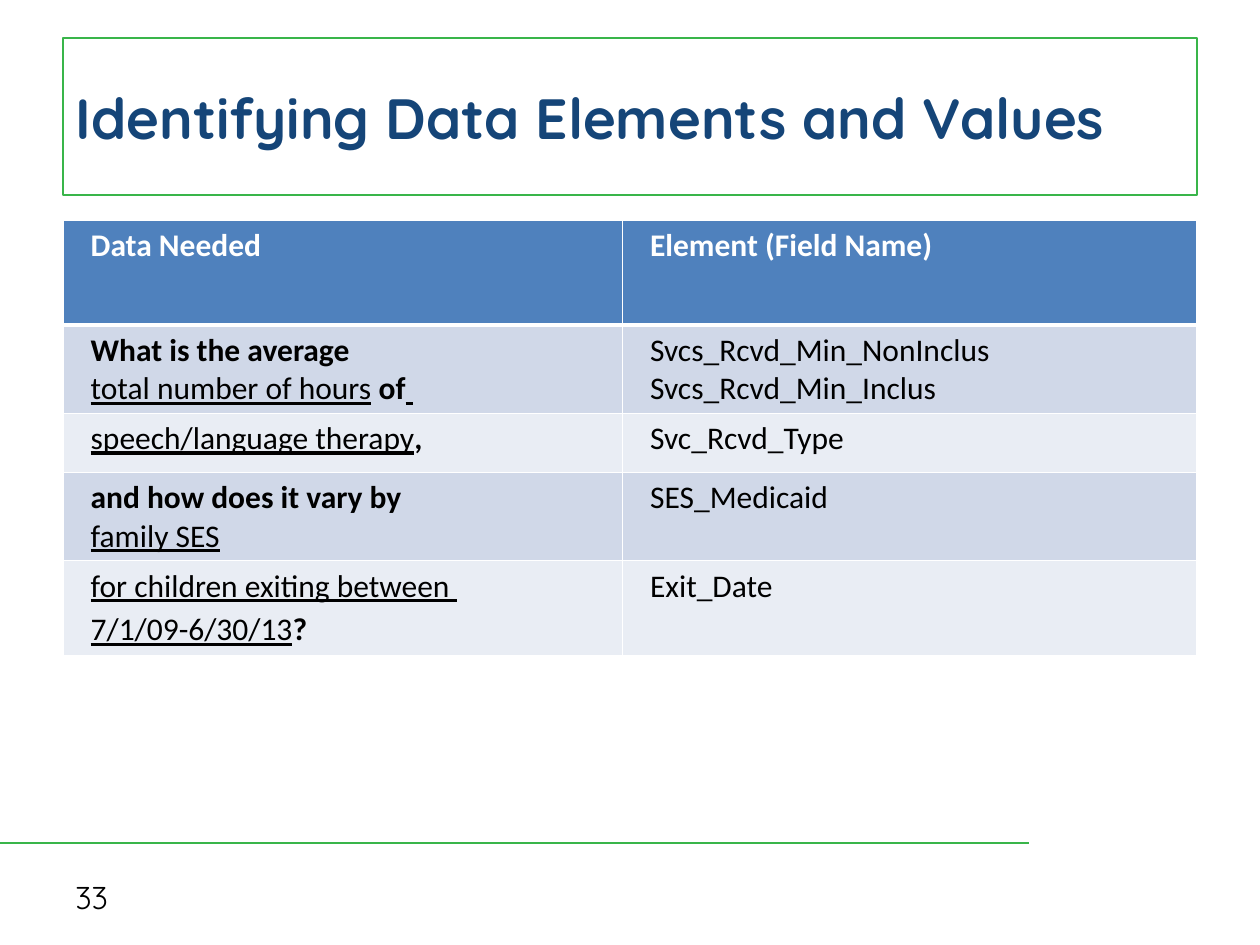
from dataclasses import dataclass
from typing import NamedTuple

from lxml.etree import SubElement
from pptx import Presentation
from pptx.dml.color import RGBColor
from pptx.enum.shapes import MSO_CONNECTOR
from pptx.enum.text import MSO_ANCHOR, MSO_AUTO_SIZE, PP_ALIGN
from pptx.oxml.ns import qn
from pptx.util import Inches, Pt

WIDTH, HEIGHT = Inches(10), Inches(7.5)
MARGIN = 0.05  # share of the slide width
GREEN, NAVY, BLACK, WHITE = "39B54A", "154578", "000000", "FFFFFF"
HEADER_FILL, BAND_FILLS = "4F81BD", ("D0D8E8", "E9EDF4")
COLUMN_WIDTHS = (4.44, 4.56)


class Part(NamedTuple):
    text: str
    bold: bool = False
    underline: bool = False


@dataclass
class Row:
    height: float
    needed: list[list[Part]]
    fields: list[str]
    line_gap: float = 0


ROWS = [
    Row(0.58,
        [[Part("What is the average", bold=True)],
         [Part("total number of hours", underline=True), Part(" "),
          Part("of", bold=True), Part(" ", underline=True)]],
        ["Svcs_Rcvd_Min_NonInclus", "Svcs_Rcvd_Min_Inclus"]),
    Row(0.47,
        [[Part("speech/language therapy", underline=True), Part(",", bold=True)]],
        ["Svc_Rcvd_Type"]),
    Row(0.67,
        [[Part("and how does it vary by", bold=True)],
         [Part("family SES", underline=True)]],
        ["SES_Medicaid"]),
    Row(0.75,
        [[Part("for children exiting between ", underline=True)],
         [Part("7/1/09-6/30/13", underline=True), Part("?", bold=True)]],
        ["Exit_Date"], line_gap=3),
]
HEADER = Row(0.83, [[Part("Data Needed", bold=True)]], ["Element (Field Name)"])


def color(value: str) -> RGBColor:
    return RGBColor.from_string(value)


def format_font(font, name: str, size: float, value: str, bold: bool = False) -> None:
    font.name, font.size, font.bold = name, Pt(size), bold
    font.color.rgb = color(value)


def add_border(cell, side: str, points: float) -> None:
    line = SubElement(cell._tc.get_or_add_tcPr(), qn(f"a:ln{side}"), w=str(Pt(points)))
    fill = SubElement(line, qn("a:solidFill"))
    SubElement(fill, qn("a:srgbClr"), val=WHITE)


def fill_cell(cell, lines: list[list[Part]], fill: str, text_color: str,
              top: float, bottom: float, line_gap: float) -> None:
    for side, points in (("L", 1), ("R", 1), ("T", top), ("B", bottom)):
        add_border(cell, side, points)
    cell.fill.solid()
    cell.fill.fore_color.rgb = color(fill)
    cell.margin_left = cell.margin_right = Inches(0.22)
    cell.margin_top = cell.margin_bottom = Inches(0.05)
    frame = cell.text_frame
    for index, parts in enumerate(lines):
        paragraph = frame.add_paragraph() if index else frame.paragraphs[0]
        if index:
            paragraph.space_before = Pt(line_gap)
        for part in parts:
            run = paragraph.add_run()
            run.text = part.text
            format_font(run.font, "Calibri", 18, text_color, part.bold)
            run.font.underline = part.underline


def add_data_table(slide) -> None:
    rows = [HEADER, *ROWS]
    table = slide.shapes.add_table(
        len(rows), len(COLUMN_WIDTHS), int(WIDTH * MARGIN), Inches(1.75),
        Inches(sum(COLUMN_WIDTHS)), Inches(sum(row.height for row in rows))).table
    for column, width in zip(table.columns, COLUMN_WIDTHS):
        column.width = Inches(width)
    for index, row in enumerate(rows):
        is_header = index == 0
        table.rows[index].height = Inches(row.height)
        fill = HEADER_FILL if is_header else BAND_FILLS[(index - 1) % 2]
        fields = [[Part(name, bold=is_header)] for name in row.fields]
        for column, lines in enumerate((row.needed, fields)):
            fill_cell(table.cell(index, column), lines, fill,
                      WHITE if is_header else BLACK,
                      top=3 if index == 1 else 1, bottom=3 if is_header else 1,
                      line_gap=row.line_gap)


def add_title(slide) -> None:
    title = slide.shapes.title
    title.left, title.top = int(WIDTH * MARGIN), int(HEIGHT * 0.04)
    title.width, title.height = int(WIDTH * (1 - 2 * MARGIN)), Inches(1.25)
    title.line.color.rgb = color(GREEN)
    title.line.width = Pt(1)
    frame = title.text_frame
    frame.text = "Identifying Data Elements and Values"
    frame.auto_size = MSO_AUTO_SIZE.NONE
    frame.vertical_anchor = MSO_ANCHOR.MIDDLE
    paragraph = frame.paragraphs[0]
    paragraph.alignment = PP_ALIGN.LEFT
    format_font(paragraph.runs[0].font, "Quicksand", 32.4, NAVY, bold=True)


def add_footer(slide) -> None:
    # Rule above the footer
    top = Inches(6.69)
    rule = slide.shapes.add_connector(MSO_CONNECTOR.STRAIGHT, 0, top, Inches(8.17), top)
    rule.line.color.rgb = color(GREEN)
    rule.line.width = Pt(1.5)
    SubElement(rule._element.spPr, qn("a:effectLst"))

    # Slide number
    box = slide.shapes.add_textbox(
        int(WIDTH * MARGIN), Inches(6.92), Inches(2.33), Inches(0.4))
    frame = box.text_frame
    frame.word_wrap = True
    frame.vertical_anchor = MSO_ANCHOR.MIDDLE
    frame.text = "33"
    format_font(frame.paragraphs[0].runs[0].font, "Quicksand", 18, BLACK)


def main() -> None:
    presentation = Presentation()
    presentation.slide_width, presentation.slide_height = WIDTH, HEIGHT
    slide = presentation.slides.add_slide(presentation.slide_layouts[5])
    add_footer(slide)
    add_title(slide)
    add_data_table(slide)
    presentation.save("out.pptx")


if __name__ == "__main__":
    main()
